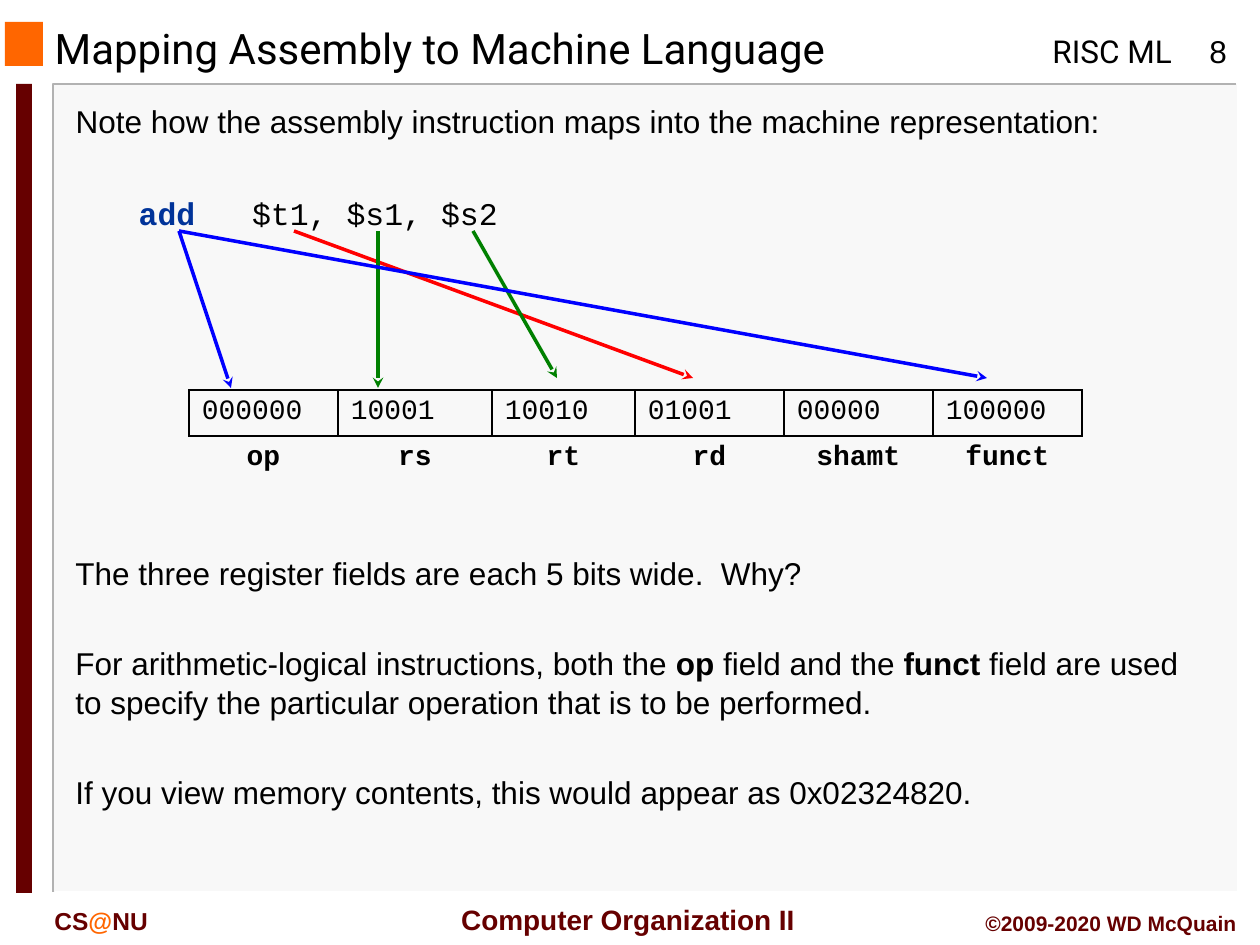
"""Build the slide that maps an assembly instruction to its machine representation."""
from dataclasses import dataclass
from typing import NamedTuple

from lxml import etree
from pptx import Presentation
from pptx import util as u
from pptx.dml.color import RGBColor
from pptx.enum import shapes, text
from pptx.oxml.ns import qn

SCALE = 914400 / 126


@dataclass(frozen=True)
class Theme:
    sans: str = "Arial"
    mono: str = "Courier New"
    head: str = "Roboto"
    ink: str = "000000"
    panel: str = "F8F8F8"
    edge: str = "B2B2B2"
    white: str = "FFFFFF"
    orange: str = "FF6600"
    maroon: str = "660000"
    keyword: str = "003399"
    red: str = "FF0000"
    green: str = "008000"
    blue: str = "0000FF"
    title: int = 24
    body: int = 18
    field: int = 16
    brand: int = 14
    credit: int = 12


T = Theme()


class Box(NamedTuple):
    left: int
    top: int
    width: int
    height: int


class Run(NamedTuple):
    text: str
    size: int = T.body
    font: str = T.sans
    color: str = T.ink
    bold: bool = False


class Para(NamedTuple):
    runs: list[Run]
    before: float = 0
    align: text.PP_ALIGN = text.PP_ALIGN.LEFT
    level: int = 0
    indent: int = 0
    spacing: float = 1.0


class Label(NamedTuple):
    box: Box
    para: Para


class Field(NamedTuple):
    name: str
    bits: str
    width: int


class Arrow(NamedTuple):
    start: tuple[int, int]
    end: tuple[int, int]
    color: str


CENTER, RIGHT = text.PP_ALIGN.CENTER, text.PP_ALIGN.RIGHT
LEADING = 1.05
GAP = 28.5

LABELS = [
    Label(Box(1040, 26, 156, 50), Para([Run("RISC ML", font=T.head)])),
    Label(Box(1176, 26, 84, 50), Para([Run("8")], align=CENTER)),
    Label(Box(442, 896, 372, 46),
          Para([Run("Computer Organization II", T.field, color=T.maroon, bold=True)], align=CENTER)),
    Label(Box(42, 900, 189, 42),
          Para([Run(part, T.brand, color=color, bold=True)
                for part, color in (("CS", T.maroon), ("@", T.orange), ("NU", T.maroon))])),
    Label(Box(924, 904, 325, 38),
          Para([Run("©2009-2020 WD McQuain", T.credit, color=T.maroon, bold=True)], align=RIGHT)),
]
INTRO = [
    Para([Run("Note how the assembly instruction maps into the machine representation:")],
         spacing=LEADING),
    Para([Run("add", font=T.mono, color=T.keyword, bold=True),
          Run("   $t1, $s1, $s2", font=T.mono)], 30, level=1, indent=63, spacing=LEADING),
]
NOTES = [
    Para([Run("The three register fields are each 5 bits wide.  Why?")], spacing=LEADING),
    Para([Run("For arithmetic-logical instructions, both the "), Run("op", bold=True),
          Run(" field and the "), Run("funct", bold=True),
          Run(" field are used to specify the particular operation that is to be performed.")],
         GAP, spacing=LEADING),
    Para([Run("If you view memory contents, this would appear as 0x02324820.")],
         GAP, spacing=LEADING),
]
FIELDS = [
    Field("op", "000000", 149), Field("rs", "10001", 154), Field("rt", "10010", 143),
    Field("rd", "01001", 149), Field("shamt", "00000", 149), Field("funct", "100000", 149),
]
ARROWS = [
    Arrow((294, 231), (693, 378), T.red),
    Arrow((378, 231), (378, 388), T.green),
    Arrow((473, 231), (557, 378), T.green),
    Arrow((179, 231), (231, 388), T.blue),
    Arrow((179, 231), (987, 378), T.blue),
]


def px(n: float) -> u.Emu:
    """Turn px into EMU."""
    return u.Emu(round(n * SCALE))


def rgb(color: str) -> RGBColor:
    """Return the colour of a hex string."""
    return RGBColor.from_string(color)


def set_all(obj, values: dict) -> None:
    """Set attributes from a dict of format values."""
    for name, value in values.items():
        setattr(obj, name, value)


def place(sp, box: Box) -> None:
    """Move and size a shape."""
    set_all(sp, dict(zip(box._fields, map(px, box))))


def write(tf, paras: list[Para], anchor=text.MSO_ANCHOR.TOP) -> None:
    """Fill a text frame with formatted paragraphs."""
    set_all(tf, {"word_wrap": True, "auto_size": text.MSO_AUTO_SIZE.NONE,
                 "vertical_anchor": anchor})
    for i, para in enumerate(paras):
        p = tf.add_paragraph() if i else tf.paragraphs[0]
        write_para(p, para)


def write_para(p, para: Para) -> None:
    """Fill one paragraph without a bullet."""
    set_all(p, {"alignment": para.align, "level": para.level, "line_spacing": para.spacing,
                "space_before": u.Pt(para.before), "space_after": u.Pt(0)})
    pPr = p._p.get_or_add_pPr()
    pPr.set("marL", str(px(para.indent)))
    pPr.set("indent", "0")
    etree.SubElement(pPr, qn("a:buNone"))
    for run in para.runs:
        r = p.add_run()
        r.text = run.text
        set_all(r.font, {"name": run.font, "size": u.Pt(run.size), "bold": run.bold})
        r.font.color.rgb = rgb(run.color)


def add_text(slide, box: Box, paras: list[Para]) -> None:
    """Add a text box."""
    write(slide.shapes.add_textbox(*map(px, box)).text_frame, paras)


def add_block(slide, box: Box, color: str) -> None:
    """Add a plain filled rectangle."""
    sp = slide.shapes.add_shape(shapes.MSO_SHAPE.RECTANGLE, *map(px, box))
    sp.shadow.inherit = False
    sp.fill.solid()
    sp.fill.fore_color.rgb = rgb(color)
    sp.line.fill.background()


def add_edge(slide, points: list[tuple[int, int]], color: str) -> None:
    """Add an open outline through the points."""
    builder = slide.shapes.build_freeform(*points[0], scale=SCALE)
    builder.add_line_segments(points[1:], close=False)
    sp = builder.convert_to_shape()
    sp.shadow.inherit = False
    sp.fill.background()
    sp.line.color.rgb = rgb(color)
    sp.line.width = u.Pt(1)


def add_arrow(slide, arrow: Arrow) -> None:
    """Add a line with a stealth head at its end."""
    c = slide.shapes.add_connector(shapes.MSO_CONNECTOR.STRAIGHT,
                                   *map(px, arrow.start + arrow.end))
    c.line.color.rgb = rgb(arrow.color)
    c.line.width = u.Pt(2)
    etree.SubElement(c.line._get_or_add_ln(), qn("a:tailEnd"), type="stealth")
    etree.SubElement(c._element.spPr, qn("a:effectLst"))


def set_borders(cell, visible: str) -> None:
    """Draw the listed sides of a cell and hide the others."""
    tcPr = cell._tc.get_or_add_tcPr()
    for side in "LRTB":
        ln = etree.SubElement(tcPr, qn(f"a:ln{side}"), w=str(u.Pt(1)))
        if side in visible:
            fill = etree.SubElement(ln, qn("a:solidFill"))
            etree.SubElement(fill, qn("a:srgbClr"), val=T.ink)
        else:
            etree.SubElement(ln, qn("a:noFill"))


def add_fields(slide, left: int, top: int, height: int) -> None:
    """Add the instruction fields as a row of bits over a row of names."""
    width = sum(field.width for field in FIELDS)
    table = slide.shapes.add_table(2, len(FIELDS), *map(px, (left, top, width, 2 * height))).table
    set_all(table, {"first_row": False, "horz_banding": False})
    for col, field in enumerate(FIELDS):
        table.columns[col].width = px(field.width)
        rows = [(Para([Run(field.bits, T.field, T.mono)]), "LRTB"),
                (Para([Run(field.name, T.field, T.mono, bold=True)], align=CENTER), "T")]
        for row, (para, sides) in enumerate(rows):
            cell = table.cell(row, col)
            set_borders(cell, sides)
            cell.fill.background()
            set_all(cell, {"margin_left": px(13), "margin_right": px(13),
                           "margin_top": px(6), "margin_bottom": px(6)})
            write_para(cell.text_frame.paragraphs[0], para)


def main() -> None:
    """Build and save the slide."""
    prs = Presentation()
    set_all(prs, {"slide_width": px(1260), "slide_height": px(945)})
    slide = prs.slides.add_slide(prs.slide_layouts[1])
    title, body = slide.placeholders

    add_block(slide, Box(54, 84, 1184, 808), T.panel)
    add_edge(slide, [(1236, 84), (53, 84), (53, 892)], T.edge)
    add_edge(slide, [(1238, 84), (1238, 892), (55, 892)], T.white)
    add_block(slide, Box(5, 22, 38, 44), T.orange)
    add_block(slide, Box(16, 84, 16, 809), T.maroon)
    for label in LABELS:
        add_text(slide, label.box, [label.para])

    for ph in (title, body):
        ph.element.getparent().append(ph.element)
    place(title, Box(42, 24, 966, 48))
    write(title.text_frame, [Para([Run("Mapping Assembly to Machine Language", T.title, T.head)])],
          text.MSO_ANCHOR.MIDDLE)
    place(body, Box(63, 94, 1166, 141))
    write(body.text_frame, INTRO)

    add_fields(slide, left=189, top=390, height=46)
    add_text(slide, Box(63, 546, 1155, 270), NOTES)
    for arrow in ARROWS:
        add_arrow(slide, arrow)
    prs.save("out.pptx")


if __name__ == "__main__":
    main()
